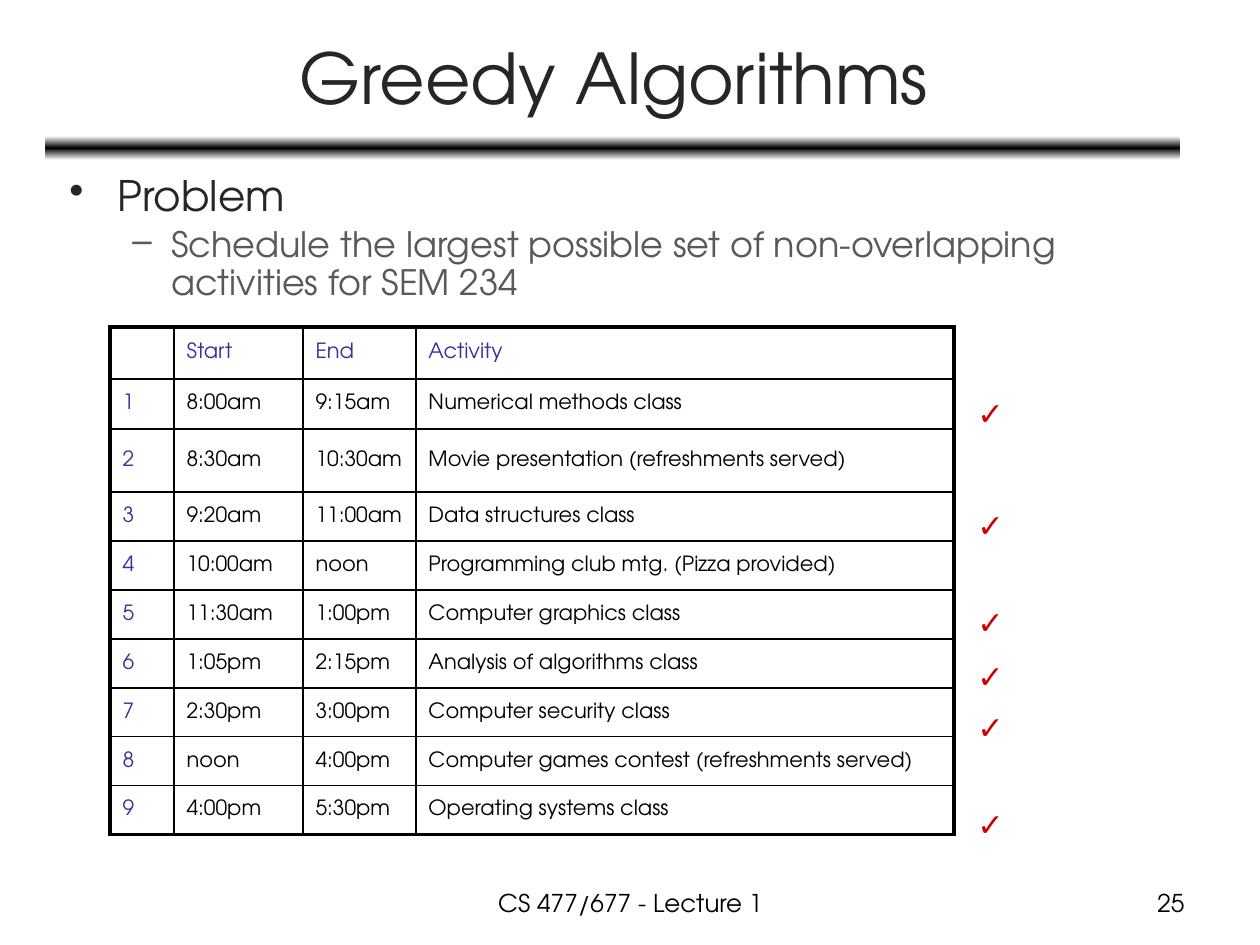
"""Build the Greedy Algorithms slide with its activity schedule."""
from lxml.etree import SubElement
from pptx import Presentation
from pptx.dml.color import RGBColor
from pptx.enum.shapes import MSO_SHAPE
from pptx.enum.text import MSO_ANCHOR, PP_ALIGN
from pptx.oxml.ns import qn
from pptx.util import Inches, Pt

FACE = "TeX Gyre Adventor"


def px(*nums):
    return [Inches(num / 126) for num in nums]


def write(para, text, tint, size, face=FACE, **more):
    run = para.add_run()
    run.text = text
    form = {"name": face, "size": Pt(size), **more}
    for key, val in form.items():
        setattr(run.font, key, val)
    run.font.color.rgb = RGBColor.from_string(tint)


deck = Presentation()
deck.slide_width, deck.slide_height = px(1260, 945)
slide = deck.slides.add_slide(deck.slide_layouts[6])
shapes = slide.shapes

bar = shapes.add_shape(MSO_SHAPE.ROUNDED_RECTANGLE, *px(45, 136, 1135, 24))
bar.shadow.inherit = False
bar.line.fill.background()
bar.fill.gradient()
bar.fill.gradient_angle = 90
stops = bar.fill._xPr.find(".//" + qn("a:gsLst"))
for stop in list(stops):
    stops.remove(stop)
for pos, tint in ((0, "FFFFFF"), (50000, "000000"), (100000, "FFFFFF")):
    stop = SubElement(stops, qn("a:gs"), pos=str(pos))
    SubElement(stop, qn("a:srgbClr"), val=tint)

labels = [
    ("CS 477/677 - Lecture 1", (431, 882, 399, 44), 14, "000000", PP_ALIGN.CENTER, MSO_ANCHOR.TOP),
    ("25", (903, 882, 294, 44), 14, "000000", PP_ALIGN.RIGHT, MSO_ANCHOR.TOP),
    ("Greedy Algorithms", (47, 14, 1134, 125), 40, "262626", PP_ALIGN.CENTER, MSO_ANCHOR.MIDDLE),
]
for text, place, size, tint, align, anchor in labels:
    frame = shapes.add_textbox(*px(*place)).text_frame
    frame.word_wrap = True
    frame.vertical_anchor = anchor
    frame.paragraphs[0].alignment = align
    write(frame.paragraphs[0], text, tint, size)

rows = [
    ("", "Start", "End", "Activity"),
    ("1", "8:00am", "9:15am", "Numerical methods class"),
    ("2", "8:30am", "10:30am", "Movie presentation (refreshments served)"),
    ("3", "9:20am", "11:00am", "Data structures class"),
    ("4", "10:00am", "noon", "Programming club mtg. (Pizza provided)"),
    ("5", "11:30am", "1:00pm", "Computer graphics class"),
    ("6", "1:05pm", "2:15pm", "Analysis of algorithms class"),
    ("7", "2:30pm", "3:00pm", "Computer security class"),
    ("8", "noon", "4:00pm", "Computer games contest (refreshments served)"),
    ("9", "4:00pm", "5:30pm", "Operating systems class"),
]
wides = px(64, 129, 113, 538)
highs = px(52, 50, 63, *[49] * 7)
grid = shapes.add_table(len(rows), len(wides), *px(110, 327), sum(wides), sum(highs)).table
grid.first_row = grid.horz_banding = False
for col, wide in zip(grid.columns, wides):
    col.width = wide
for row, high in zip(grid.rows, highs):
    row.height = high

for r, row in enumerate(rows):
    for c, text in enumerate(row):
        cell = grid.cell(r, c)
        cell.vertical_anchor = MSO_ANCHOR.MIDDLE
        para = cell.text_frame.paragraphs[0]
        para.font.size = Pt(12)
        before = para._p.get_or_add_pPr().get_or_add_spcBef()
        SubElement(before, qn("a:spcPct"), val="20000")
        if text:
            write(para, text, "000000" if r and c else "333399", 12)
        props = cell._tc.get_or_add_tcPr()
        edges = {"L": c == 0, "R": c == len(row) - 1, "T": r == 0, "B": r == len(rows) - 1}
        for side, outer in edges.items():
            edge = SubElement(props, qn("a:ln" + side), w=str(Pt(2.25 if outer else 1)))
            fill = SubElement(edge, qn("a:solidFill"))
            SubElement(fill, qn("a:srgbClr"), val="000000")
        cell.fill.background()

body = shapes.add_textbox(*px(57, 169, 1046, 152)).text_frame
body.word_wrap = True
points = [
    ("Problem", "•", 24, "262626", 48, 48),
    ("Schedule the largest possible set of non-overlapping activities for SEM 234",
     "–", 20, "595959", 102, 39),
]
for i, (text, mark, size, tint, left, hang) in enumerate(points):
    para = body.add_paragraph() if i else body.paragraphs[0]
    para.level = i
    para.line_spacing = 0.9
    props = para._p.get_or_add_pPr()
    SubElement(props.get_or_add_spcBef(), qn("a:spcPct"), val="20000")
    left, hang = px(left, hang)
    props.set("marL", str(left))
    props.set("indent", str(-hang))
    SubElement(props, qn("a:buChar"), char=mark)
    write(para, text, tint, size)

for top in (388, 500, 597, 651, 702, 799):
    frame = shapes.add_textbox(*px(965, top, 57, 50)).text_frame
    frame.word_wrap = False
    write(frame.paragraphs[0], "✓", "CC0000", 18, "Arial", bold=True)

deck.save("out.pptx")
